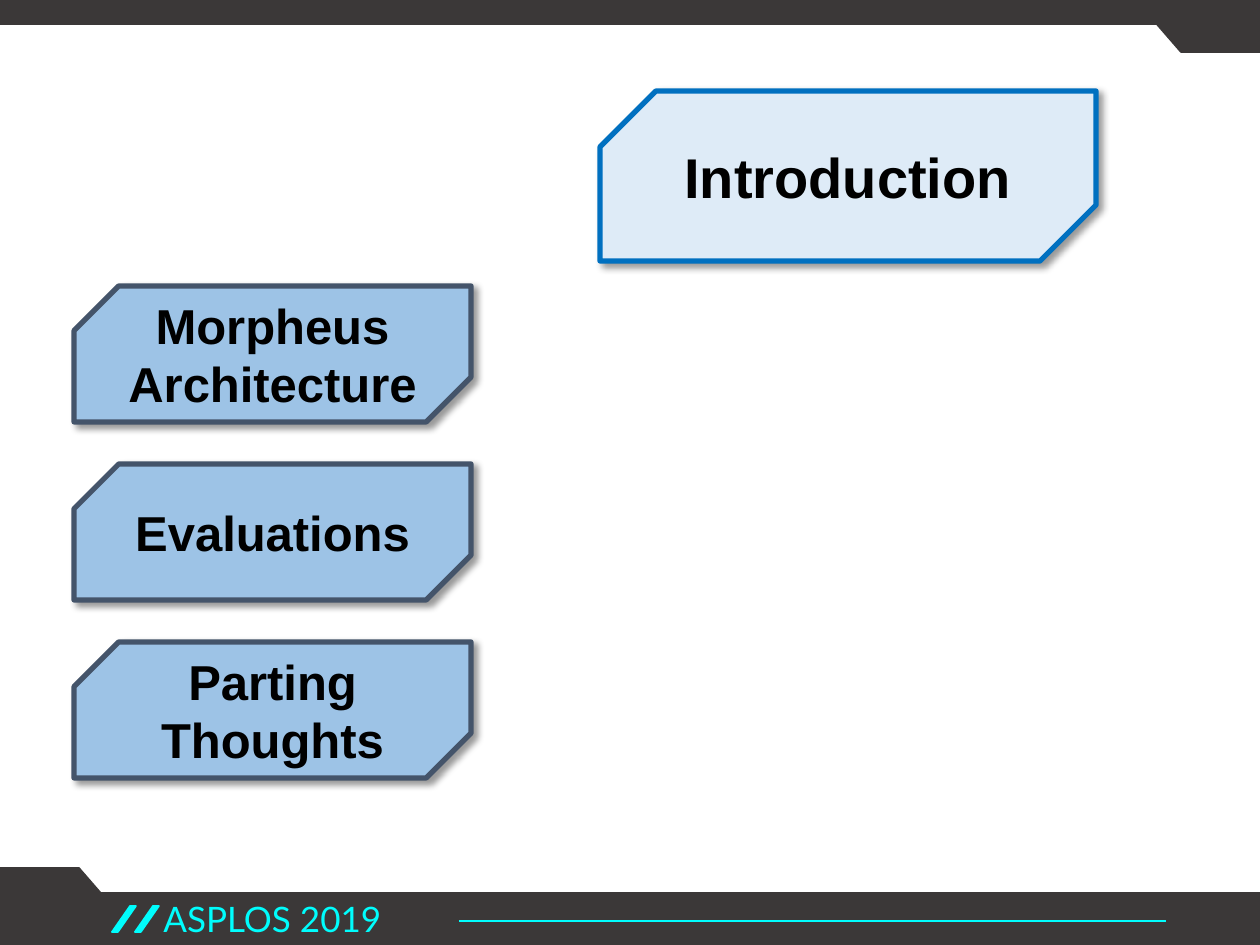
from dataclasses import dataclass

from lxml import etree
from pptx import Presentation
from pptx.dml.color import RGBColor
from pptx.enum.shapes import MSO_CONNECTOR, MSO_SHAPE
from pptx.enum.text import MSO_ANCHOR, PP_ALIGN
from pptx.oxml.ns import qn
from pptx.shapes.autoshape import Shape
from pptx.slide import Slide
from pptx.util import Emu, Pt

RECTANGLE = MSO_SHAPE.RECTANGLE
PARALLELOGRAM = MSO_SHAPE.PARALLELOGRAM
SNIPPED = MSO_SHAPE.SNIP_2_DIAG_RECTANGLE
STRAIGHT = MSO_CONNECTOR.STRAIGHT
CENTER = PP_ALIGN.CENTER
MIDDLE = MSO_ANCHOR.MIDDLE

EMU_PER_PX = 914400 / 126
PAGE_WIDTH, PAGE_HEIGHT = 1260, 945


@dataclass(frozen=True)
class Theme:
    band: str = "3B3838"
    accent: str = "00FDFD"
    text: str = "000000"
    shadow: str = "000000"
    topic_fill: str = "9DC3E6"
    topic_line: str = "44546A"
    current_fill: str = "DEEBF7"
    current_line: str = "0070C0"
    topic_font: str = "Arial"
    footer_font: str = "Lato"
    topic_size: int = 28
    current_size: int = 32
    footer_size: int = 20
    thin: int = 1
    thick: int = 3


@dataclass(frozen=True)
class Area:
    left: int
    top: int
    width: int
    height: int


@dataclass(frozen=True)
class Topic:
    label: str
    area: Area
    fill: str
    line: str
    size: int


THEME = Theme()

BANDS = [Area(0, -1, PAGE_WIDTH, 25), Area(0, 893, PAGE_WIDTH, 52)]
BAND_TABS = [
    [(1260, -1), (1260, 52), (1181, 52), (1135, -1)],
    [(0, 921), (0, 868), (79, 868), (125, 921)],
]
SLASHES = [Area(left, 906, 24, 26) for left in (112, 135)]
FOOTER_AREA = Area(151, 891, 312, 55)
FOOTER_RULE = (459, 1166, 921)

TOPIC_TOP, TOPIC_PITCH = 286, 178
TOPICS = [
    Topic(label, Area(74, TOPIC_TOP + row * TOPIC_PITCH, 397, 136),
          THEME.topic_fill, THEME.topic_line, THEME.topic_size)
    for row, label in enumerate(
        ["Morpheus Architecture", "Evaluations", "Parting Thoughts"])
] + [
    Topic("Introduction", Area(600, 91, 496, 170),
          THEME.current_fill, THEME.current_line, THEME.current_size),
]


def px(length: int) -> Emu:
    return Emu(round(length * EMU_PER_PX))


def bounds(area: Area) -> tuple[Emu, Emu, Emu, Emu]:
    return px(area.left), px(area.top), px(area.width), px(area.height)


def paint(shape: Shape, fill: str, line: str, width: int) -> None:
    shape.shadow.inherit = False
    shape.fill.solid()
    shape.fill.fore_color.rgb = RGBColor.from_string(fill)
    shape.line.color.rgb = RGBColor.from_string(line)
    shape.line.width = Pt(width)


def add_preset(page: Slide, preset: MSO_SHAPE, area: Area,
               fill: str, line: str, width: int) -> Shape:
    shape = page.shapes.add_shape(preset, *bounds(area))
    paint(shape, fill, line, width)
    return shape


def add_band_tab(page: Slide, points: list[tuple[int, int]]) -> None:
    builder = page.shapes.build_freeform(*points[0], scale=EMU_PER_PX)
    builder.add_line_segments(points[1:], close=True)
    paint(builder.convert_to_shape(), THEME.band, THEME.band, THEME.thin)


def add_span(box: Shape, text: str, font: str, size: int, color: str,
             bold: bool = False) -> None:
    span = box.text_frame.paragraphs[0].add_run()
    span.text = text
    span.font.name = font
    span.font.size = Pt(size)
    span.font.bold = bold
    span.font.color.rgb = RGBColor.from_string(color)


def cast_shadow(shape: Shape) -> None:
    """Give the shape a soft 40 % shadow towards the lower right."""
    effects = shape.element.spPr.find(qn("a:effectLst"))
    shadow = etree.SubElement(
        effects, qn("a:outerShdw"), blurRad=str(Pt(4)), dist=str(Pt(3)),
        dir=str(45 * 60000), algn="tl", rotWithShape="0")
    color = etree.SubElement(shadow, qn("a:srgbClr"), val=THEME.shadow)
    etree.SubElement(color, qn("a:alpha"), val="40000")


def add_topic(page: Slide, topic: Topic) -> None:
    box = add_preset(page, SNIPPED, topic.area, topic.fill, topic.line, THEME.thick)
    box.adjustments[0] = 0.329
    box.adjustments[1] = 0
    cast_shadow(box)
    frame = box.text_frame
    frame.word_wrap = True
    frame.vertical_anchor = MIDDLE
    frame.paragraphs[0].alignment = CENTER
    add_span(box, topic.label, THEME.topic_font, topic.size, THEME.text, bold=True)


def add_footer(page: Slide) -> None:
    left, right, y = FOOTER_RULE
    rule = page.shapes.add_connector(STRAIGHT, px(left), px(y), px(right), px(y))
    rule.line.color.rgb = RGBColor.from_string(THEME.accent)
    rule.line.width = Pt(THEME.thin)
    etree.SubElement(rule.element.spPr, qn("a:effectLst"))
    for area in SLASHES:
        slash = add_preset(page, PARALLELOGRAM, area,
                           THEME.accent, THEME.accent, THEME.thin)
        slash.adjustments[0] = 0.753
    box = page.shapes.add_textbox(*bounds(FOOTER_AREA))
    box.text_frame.word_wrap = False
    # An unwrapped box needs an explicit side to start from.
    box.text_frame.paragraphs[0].alignment = PP_ALIGN.LEFT
    add_span(box, "ASPLOS 2019", THEME.footer_font, THEME.footer_size, THEME.accent)


def main() -> None:
    deck = Presentation()
    deck.slide_width, deck.slide_height = px(PAGE_WIDTH), px(PAGE_HEIGHT)
    page = deck.slides.add_slide(deck.slide_layouts[6])
    for band, tab in zip(BANDS, BAND_TABS):
        add_band_tab(page, tab)
        add_preset(page, RECTANGLE, band, THEME.band, THEME.band, THEME.thin)
    add_footer(page)
    for topic in TOPICS:
        add_topic(page, topic)
    deck.save("out.pptx")


if __name__ == "__main__":
    main()
